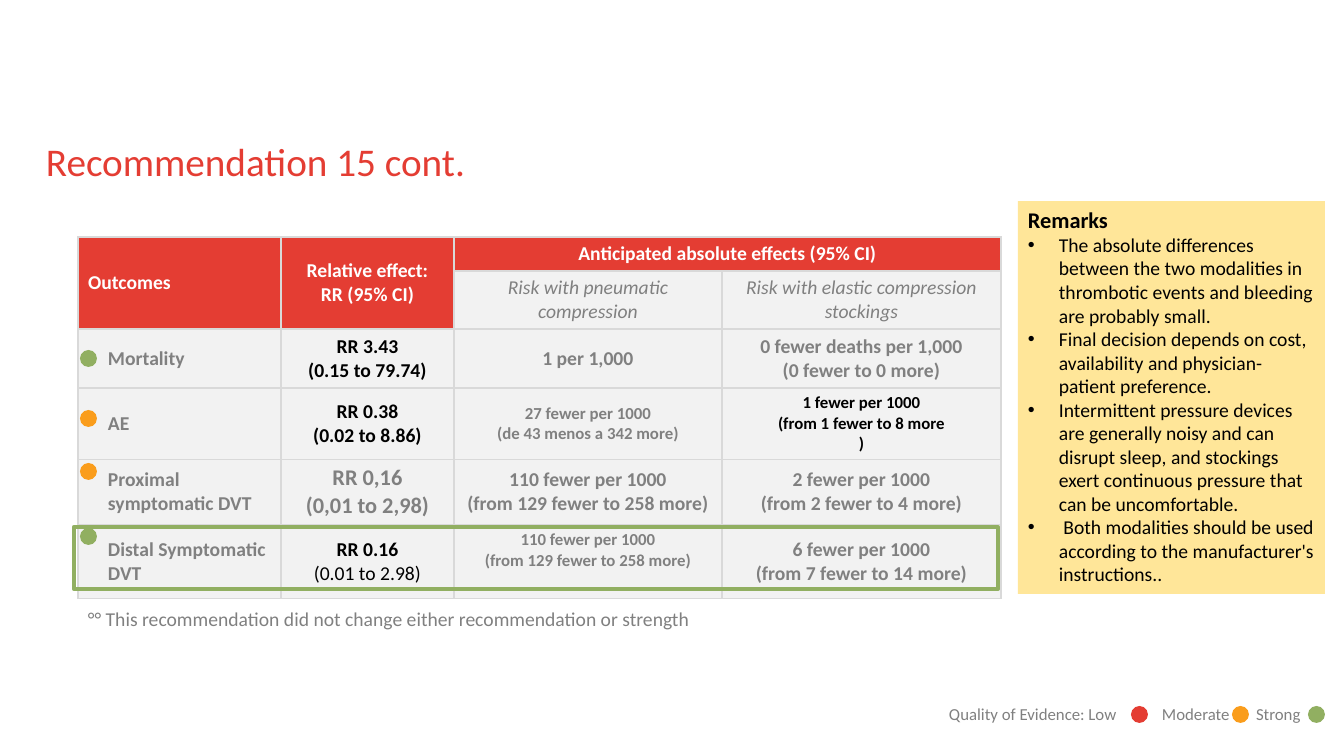
"""Build the slide on recommendation 15: outcome table, remarks and evidence legend."""
import lxml.etree
import pptx
import pptx.dml.color
import pptx.enum.shapes
import pptx.enum.text
import pptx.oxml
import pptx.oxml.ns
import pptx.util

PX = 9071
RED, GREEN, AMBER = "E43D33", "91AF61", "FA9D1C"
GREY, BLACK, WHITE, PALE = "808080", "000000", "FFFFFF", "F2F2F2"
SHAPE = pptx.enum.shapes.MSO_SHAPE
ALIGN = pptx.enum.text.PP_ALIGN
MID = pptx.enum.text.MSO_ANCHOR.MIDDLE
NS = pptx.oxml.ns.nsdecls("a")


def hue(code):
    return pptx.dml.color.RGBColor.from_string(code)


def write(frame, text, color, size=14, align=ALIGN.LEFT, **style):
    frame.word_wrap = True
    frame.text = text
    look = {"name": "Calibri", "size": pptx.util.Pt(size), **style}
    for para in frame.paragraphs:
        para.alignment = align
        for run in para.runs:
            run.font.color.rgb = hue(color)
            for key, value in look.items():
                setattr(run.font, key, value)


deck = pptx.Presentation()
deck.slide_width, deck.slide_height = 1344 * PX, 756 * PX
slide = deck.slides.add_slide(deck.slide_layouts[6])
shapes = slide.shapes

widths = [203, 173, 268, 279]
heights = [34, 58, 59, 71, 65, 74]
bold = {"bold": True}
head = {"color": WHITE, **bold}
risk = {"color": GREY, "italic": True, "bold": False}
dim = {"color": GREY, **bold}
dark = {"color": BLACK, **bold}
small = {"size": 12}
rows = [
    [("Outcomes", head), ("Relative effect:\nRR (95% CI)", head),
     ("Anticipated absolute effects (95% CI)", head), None],
    [None, None, ("Risk with pneumatic compression", risk),
     ("Risk with elastic compression stockings", risk)],
    [("Mortality", dim), ("RR 3.43\v(0.15 to 79.74)", dark), ("1 per 1,000", dim),
     ("0 fewer deaths per 1,000\n(0 fewer to 0 more)", dim)],
    [("AE", dim), ("RR 0.38\v(0.02 to 8.86)", dark),
     ("27 fewer per 1000\n(de 43 menos a 342 more)", {**dim, **small}),
     ("1 fewer per 1000\n(from 1 fewer to 8 more\n)", {**dark, **small})],
    [("Proximal symptomatic DVT", dim), ("RR 0,16\n(0,01 to 2,98)", {**dim, "size": 16}),
     ("110 fewer per 1000\n(from 129 fewer to 258 more)", dim),
     ("2 fewer per 1000\n(from 2 fewer to 4 more)", dim)],
    [("Distal Symptomatic DVT", dim), ("RR 0.16\v(0.01 to 2.98)", dark),
     ("110 fewer per 1000\n(from 129 fewer to 258 more)", {**dim, **small}),
     ("6 fewer per 1000\n(from 7 fewer to 14 more)", dim)],
]
grid = shapes.add_table(len(rows), len(widths), 78 * PX, 237 * PX,
                        sum(widths) * PX, sum(heights) * PX).table
grid.first_row = grid.horz_banding = False
for col, width in zip(grid.columns, widths):
    col.width = width * PX
for row, height in zip(grid.rows, heights):
    row.height = height * PX
for r, row in enumerate(rows):
    for c, entry in enumerate(row):
        cell = grid.cell(r, c)
        cell.fill.solid()
        cell.fill.fore_color.rgb = hue(RED if r == 0 or (r == 1 and c < 2) else PALE)
        cell.vertical_anchor = MID
        if c == 0 and r > 1:
            cell.margin_left = 30 * PX
        if entry:
            text, look = entry
            write(cell.text_frame, text, align=ALIGN.CENTER if c else ALIGN.LEFT, **look)
        props = cell._tc.get_or_add_tcPr()
        for i, side in enumerate("LRTB"):
            props.insert(i, pptx.oxml.parse_xml(
                f'<a:ln{side} {NS} w="12700"><a:solidFill><a:srgbClr val="D9D9D9"/>'
                f'</a:solidFill></a:ln{side}>'))
for c in range(2):
    grid.cell(0, c).merge(grid.cell(1, c))
grid.cell(0, 2).merge(grid.cell(0, 3))
grid.cell(5, 1).text_frame.paragraphs[0].runs[1].font.bold = False
grid.cell(5, 2).margin_bottom = 27 * PX

frame = shapes.add_shape(SHAPE.RECTANGLE, 74 * PX, 527 * PX, 924 * PX, 62 * PX)
frame.shadow.inherit = False
frame.fill.background()
frame.line.color.rgb = hue(GREEN)
frame.line.width = pptx.util.Pt(3)

labels = [
    (46, 137, 1210, 46, 0, "Recommendation 15 cont.", RED, 28),
    (78, 602, 650, 34, 10, "°° This recommendation did not change either recommendation or strength",
     GREY, 14),
    (939, 699, 400, 30, 10, "Quality of Evidence: Low\tModerate\tStrong", GREY, 12),
]
for x, y, wide, high, inset, text, color, size in labels:
    box = shapes.add_textbox(x * PX, y * PX, wide * PX, high * PX).text_frame
    for key, value in {"left": inset, "right": inset, "top": inset // 2, "bottom": inset // 2}.items():
        setattr(box, "margin_" + key, value * PX)
    write(box, text, color, size)
legend = box.paragraphs[0]._p.get_or_add_pPr()
legend.append(pptx.oxml.parse_xml(
    f'<a:tabLst {NS}><a:tab pos="{213 * PX}" algn="l"/><a:tab pos="{307 * PX}" algn="l"/></a:tabLst>'))

dots = [(1131, 706, RED), (1232, 706, AMBER), (1308, 706, GREEN),
        (80, 350, GREEN), (80, 410, AMBER), (80, 463, AMBER), (80, 528, GREEN)]
for x, y, color in dots:
    dot = shapes.add_shape(SHAPE.OVAL, x * PX, y * PX, 17 * PX, 17 * PX)
    dot.shadow.inherit = False
    dot.fill.solid()
    dot.fill.fore_color.rgb = hue(color)
    dot.line.fill.background()

notes = [
    "Remarks",
    "The absolute differences between the two modalities in thrombotic events and bleeding are probably small.",
    "Final decision depends on cost, availability and physician-patient preference.",
    "Intermittent pressure devices are generally noisy and can disrupt sleep, and stockings exert "
    "continuous pressure that can be uncomfortable.",
    " Both modalities should be used according to the manufacturer's instructions..",
]
panel = shapes.add_shape(SHAPE.RECTANGLE, 1018 * PX, 201 * PX, 307 * PX, 393 * PX)
panel.shadow.inherit = False
panel.fill.solid()
panel.fill.fore_color.rgb = hue("FFE699")
panel.line.fill.background()
panel.text_frame.vertical_anchor = pptx.enum.text.MSO_ANCHOR.TOP
write(panel.text_frame, "\n".join(notes), BLACK)
title, *points = panel.text_frame.paragraphs
for key, value in {"size": pptx.util.Pt(16), "bold": True}.items():
    setattr(title.runs[0].font, key, value)
for point in points:
    props = point._p.get_or_add_pPr()
    props.set("marL", str(31 * PX))
    props.set("indent", str(-31 * PX))
    lxml.etree.SubElement(props, pptx.oxml.ns.qn("a:buFont"), typeface="Arial")
    lxml.etree.SubElement(props, pptx.oxml.ns.qn("a:buChar"), char="•")

deck.save("out.pptx")
